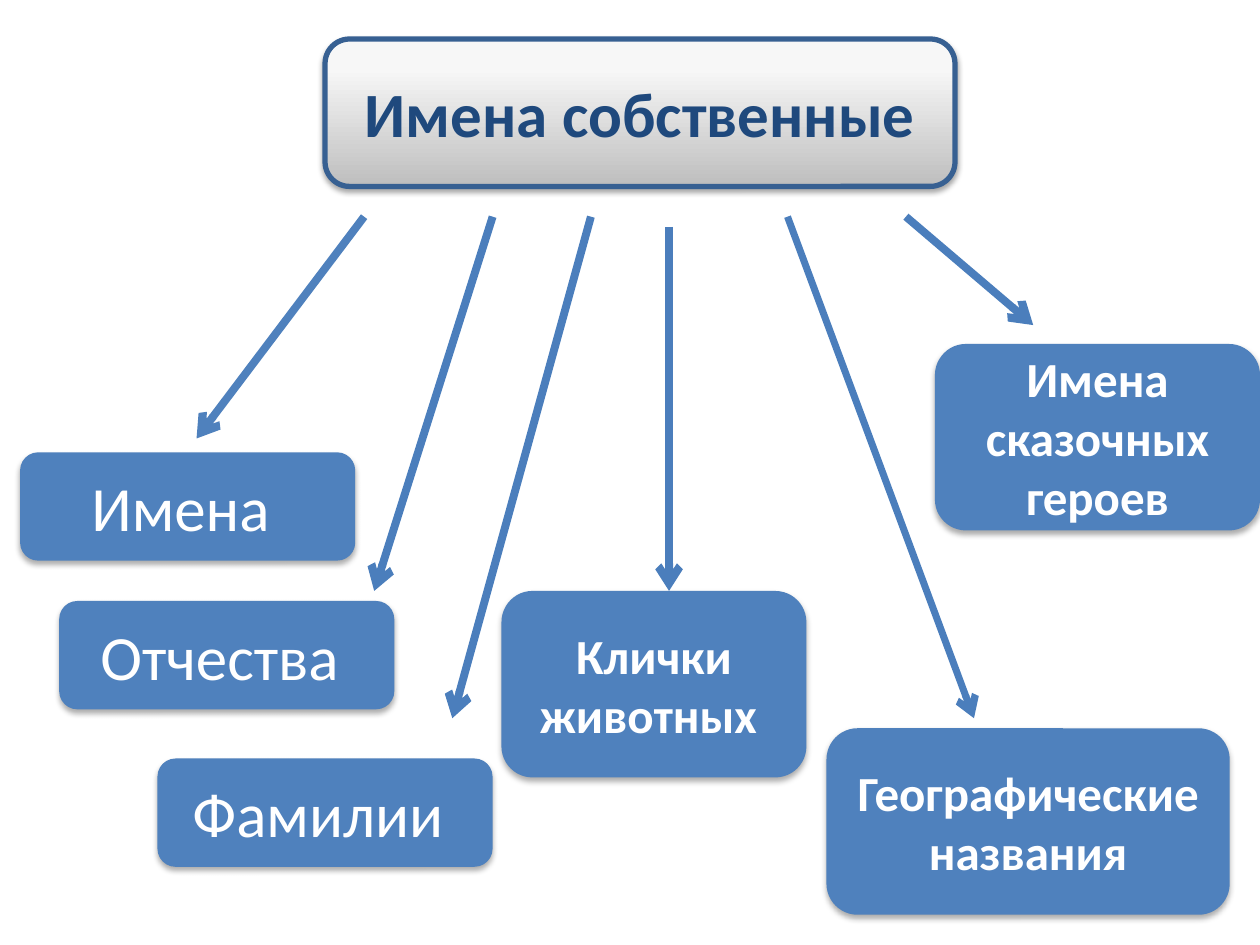
import copy
import pptx
import pptx.util
import pptx.dml.color
import pptx.enum.shapes
import pptx.enum.text
import pptx.oxml
import pptx.oxml.ns

HUE = {
    "box": "4F81BD", "line": "4B7EBC", "edge": "376092",
    "title": "1F497D", "text": "FFFFFF", "shade": "000000",
}
FADE = [(0, "BEBEBE"), (0.8, "F7F7F7"), (1, "F8F8F8")]
HEAD = ("Имена собственные", 258, 31, 500, 117)
NAMES = [
    ("Имена ", 16, 359),
    ("Отчества ", 47, 477),
    ("Фамилии ", 125, 602),
]
KINDS = [
    ("Клички животных ", 398, 469, 242),
    ("Географические названия", 656, 578, 320),
    ("Имена сказочных героев", 742, 273, 258),
]
LINKS = [
    (289, 172, 156, 348, "box", 4.5),
    (391, 172, 297, 469, "line", 4.5),
    (469, 172, 359, 570, "line", 4.5),
    (531, 180, 531, 469, "line", 4.5),
    (719, 172, 820, 258, "line", 4.5),
    (625, 172, 773, 570, "line", 4),
]
SCALE = 9144
qn = pptx.oxml.ns.qn
NS = pptx.oxml.ns.nsdecls("a")


def emu(*px):
    return [pptx.util.Emu(n * SCALE) for n in px]


def rgb(hue):
    return pptx.dml.color.RGBColor.from_string(hue)


def shade(box, alpha, blur, dist):
    box.shadow.inherit = False
    blur, dist = int(pptx.util.Pt(blur)), int(pptx.util.Pt(dist))
    box.element.spPr.find(qn("a:effectLst")).append(pptx.oxml.parse_xml(
        f'<a:outerShdw {NS} blurRad="{blur}" dist="{dist}" dir="5400000" rotWithShape="0">'
        f'<a:srgbClr val="{HUE["shade"]}"><a:alpha val="{alpha * 1000}"/></a:srgbClr>'
        '</a:outerShdw>'))


def add_box(slide, text, x, y, w, h, size, bold, hue="text"):
    box = slide.shapes.add_shape(
        pptx.enum.shapes.MSO_SHAPE.ROUNDED_RECTANGLE, *emu(x, y, w, h))
    box.fill.solid()
    box.fill.fore_color.rgb = rgb(HUE["box"])
    box.line.fill.background()
    frame = box.text_frame
    frame.word_wrap = True
    frame.vertical_anchor = pptx.enum.text.MSO_ANCHOR.MIDDLE
    para = frame.paragraphs[0]
    para.alignment = pptx.enum.text.PP_ALIGN.CENTER
    run = para.add_run()
    run.text = text
    run.font.name = "Calibri"
    run.font.size = pptx.util.Pt(size)
    run.font.bold = bold
    run.font.color.rgb = rgb(HUE[hue])
    return box


def add_head(slide):
    box = add_box(slide, *HEAD, 36, True, "title")
    box.fill.gradient()
    box.fill.gradient_angle = 90
    stops = box.element.spPr.find(qn("a:gradFill")).find(qn("a:gsLst"))
    stops.append(copy.deepcopy(stops[0]))
    for stop, (spot, hue) in zip(box.fill.gradient_stops, FADE):
        stop.position = spot
        stop.color.rgb = rgb(hue)
    box.line.color.rgb = rgb(HUE["edge"])
    box.line.width = pptx.util.Pt(3)
    shade(box, 35, 3.1, 1.8)


def add_link(slide, x1, y1, x2, y2, hue, width):
    link = slide.shapes.add_connector(
        pptx.enum.shapes.MSO_CONNECTOR.STRAIGHT, *emu(x1, y1, x2, y2))
    link.line.color.rgb = rgb(HUE[hue])
    link.line.width = pptx.util.Pt(width)
    props = link.element.spPr
    props.find(qn("a:ln")).append(
        pptx.oxml.parse_xml(f'<a:tailEnd {NS} type="arrow"/>'))
    props.append(pptx.oxml.parse_xml(f'<a:effectLst {NS}/>'))


def main():
    deck = pptx.Presentation()
    deck.slide_width, deck.slide_height = emu(1000, 750)
    slide = deck.slides.add_slide(deck.slide_layouts[6])
    add_head(slide)
    for text, x, y in NAMES:
        shade(add_box(slide, text, x, y, 266, 86, 36, False), 32, 3.5, 2.2)
    for text, x, y, w in KINDS:
        shade(add_box(slide, text, x, y, w, 148, 28, True), 32, 3.5, 2.2)
    for link in LINKS:
        add_link(slide, *link)
    deck.save("out.pptx")


if __name__ == "__main__":
    main()
